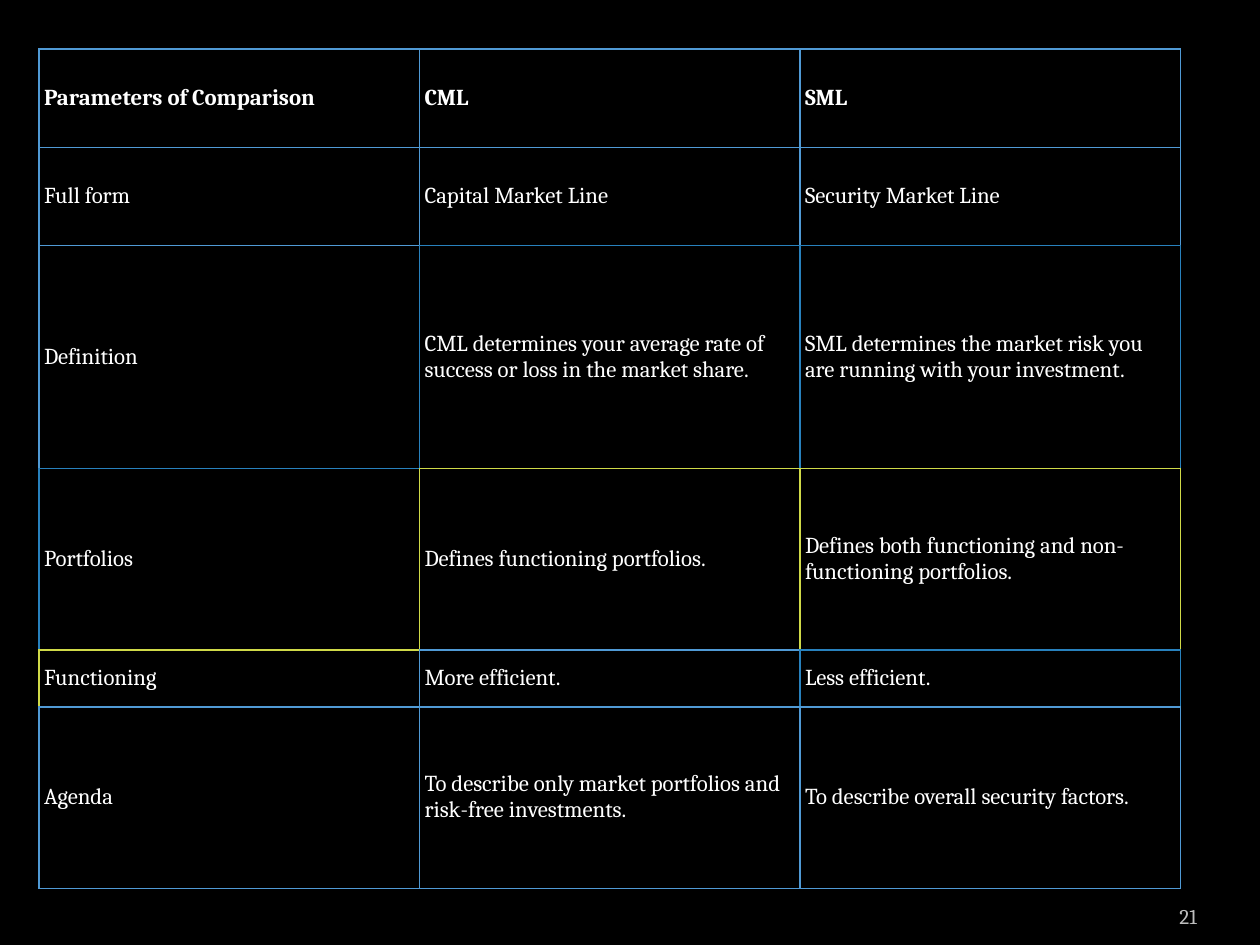
from lxml import etree
from pptx import Presentation
from pptx import util as u
from pptx.dml.color import RGBColor
from pptx.enum import text
from pptx.oxml import ns

BLACK = RGBColor(0x00, 0x00, 0x00)
WHITE = RGBColor(0xFF, 0xFF, 0xFF)
GREY = RGBColor(0xBD, 0xBD, 0xBD)
SKY = RGBColor(0x50, 0x9A, 0xD5)
BLUE = RGBColor(0x28, 0x81, 0xBD)
LIME = RGBColor(0xD0, 0xDA, 0x48)

ROWS = [
    ("Parameters of Comparison", "CML", "SML"),
    ("Full form", "Capital Market Line", "Security Market Line"),
    (
        "Definition",
        "CML determines your average rate of success or loss in the market share.",
        "SML determines the market risk you are running with your investment.",
    ),
    (
        "Portfolios",
        "Defines functioning portfolios.",
        "Defines both functioning and non-functioning portfolios.",
    ),
    ("Functioning", "More efficient.", "Less efficient."),
    (
        "Agenda",
        "To describe only market portfolios and risk-free investments.",
        "To describe overall security factors.",
    ),
]
CELL_COLORS = [
    (SKY, SKY, SKY),
    (SKY, SKY, SKY),
    (SKY, BLUE, BLUE),
    (BLUE, LIME, LIME),
    (LIME, SKY, BLUE),
    (SKY, SKY, SKY),
]
ROW_HEIGHTS = [0.78, 0.78, 1.77, 1.44, 0.45, 1.44]
COL_WIDTH = 3.02


class SlideBuilder:
    """Holds the style and the current slide, and adds elements to it."""

    font = "Cambria"
    cell_margin = u.Inches(0.04)

    def __init__(self, prs):
        self.s = prs.slides.add_slide(prs.slide_layouts[6])
        fill = self.s.background.fill
        fill.solid()
        fill.fore_color.rgb = BLACK

    def style(self, p, size, color, bold=False):
        p.font.name = self.font
        p.font.size = u.Pt(size)
        p.font.color.rgb = color
        p.font.bold = bold

    def border(self, cell, index, side, color, width):
        ln = etree.Element(ns.qn(f"a:ln{side}"), w=str(u.Pt(width)))
        fill = etree.SubElement(ln, ns.qn("a:solidFill"))
        etree.SubElement(fill, ns.qn("a:srgbClr"), val=str(color))
        cell._tc.get_or_add_tcPr().insert(index, ln)

    def borders(self, cell, colors, i, j):
        own = colors[i][j]
        last_col = j == len(colors[i]) - 1
        last_row = i == len(colors) - 1
        right = (own, 0.5) if last_col else (colors[i][j + 1], 1)
        bottom = (own, 0.5) if last_row else (colors[i + 1][j], 1)
        sides = {"L": (own, 1), "R": right, "T": (own, 1), "B": bottom}
        for index, (side, line) in enumerate(sides.items()):
            self.border(cell, index, side, *line)

    def cell(self, cell, value, bold):
        cell.fill.background()
        cell.vertical_anchor = text.MSO_ANCHOR.MIDDLE
        cell.margin_left = cell.margin_right = self.cell_margin
        cell.margin_top = cell.margin_bottom = self.cell_margin
        cell.text = value
        self.style(cell.text_frame.paragraphs[0], 13, WHITE, bold)

    def table(self, left, top, rows, colors, heights, col_width):
        cols = len(rows[0])
        tbl = self.s.shapes.add_table(
            len(rows), cols, u.Inches(left), u.Inches(top),
            u.Inches(col_width * cols), u.Inches(sum(heights)),
        ).table
        tbl.horz_banding = False
        tbl.first_row = False
        for col in tbl.columns:
            col.width = u.Inches(col_width)
        for i, values in enumerate(rows):
            tbl.rows[i].height = u.Inches(heights[i])
            for j, value in enumerate(values):
                cell = tbl.cell(i, j)
                self.cell(cell, value, bold=i == 0)
                self.borders(cell, colors, i, j)

    def page_number(self, left, top, width, height, value):
        sp = self.s.shapes.add_textbox(*map(u.Inches, (left, top, width, height)))
        tf = sp.text_frame
        tf.word_wrap = True
        tf.vertical_anchor = text.MSO_ANCHOR.BOTTOM
        tf.margin_left = tf.margin_right = 0
        p = tf.paragraphs[0]
        p.text = value
        p.alignment = text.PP_ALIGN.RIGHT
        self.style(p, 12, GREY)


def main():
    prs = Presentation()
    prs.slide_width, prs.slide_height = u.Inches(10), u.Inches(7.5)
    builder = SlideBuilder(prs)
    builder.page_number(8.67, 7.02, 0.83, 0.4, "21")
    builder.table(0.31, 0.39, ROWS, CELL_COLORS, ROW_HEIGHTS, COL_WIDTH)
    prs.save("out.pptx")


if __name__ == "__main__":
    main()
